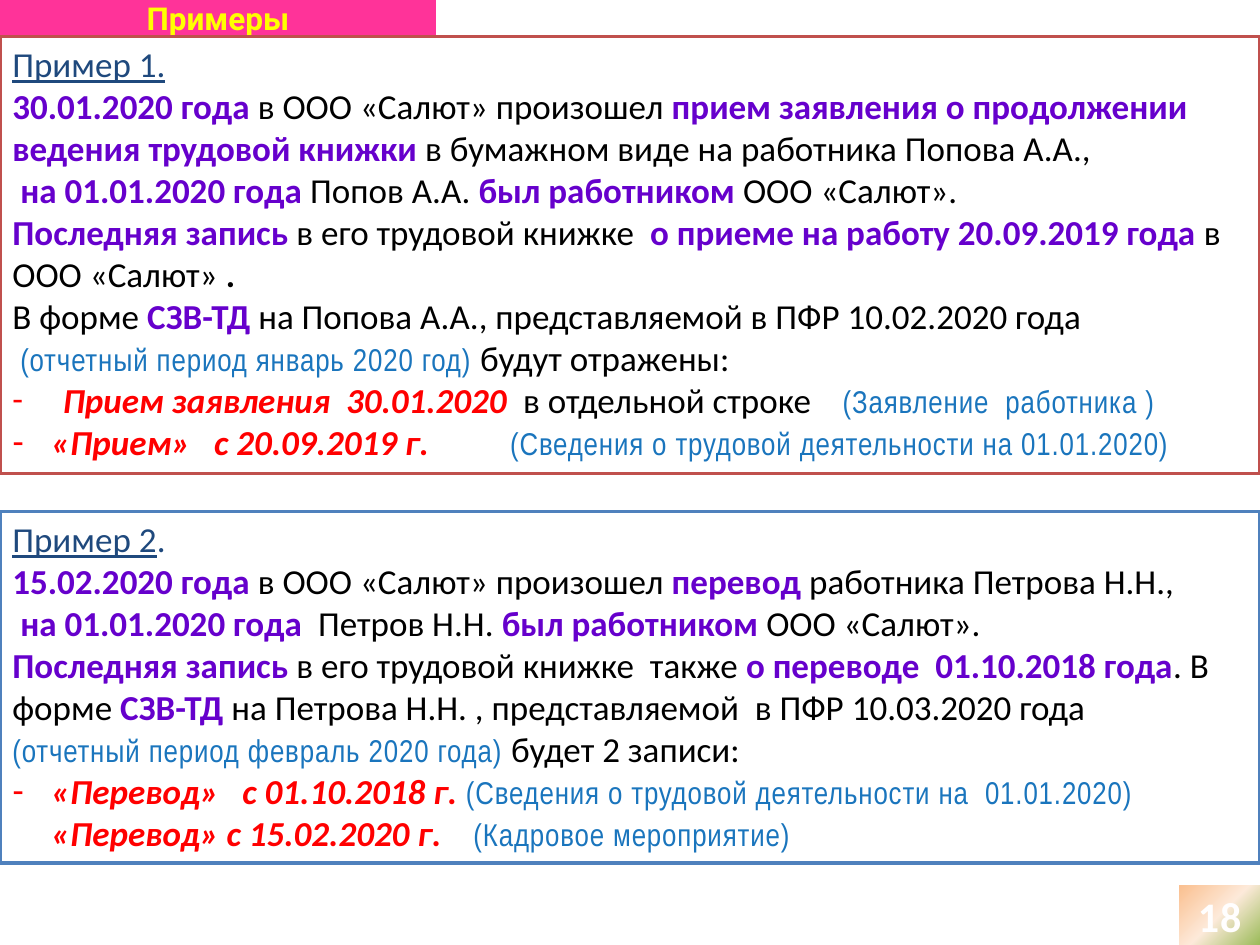
"""Build the slide with two worked examples of the СЗВ-ТД form."""
from lxml import etree
from pptx import Presentation
from pptx import util as u
from pptx.dml import color as dml
from pptx.enum import shapes, text
from pptx.oxml import ns

Inches = u.Inches
COLORS = {
    "pink": "FF3399", "yellow": "FFFF00", "white": "FFFFFF", "black": "000000",
    "navy": "1F497D", "violet": "6600CC", "red": "FF0000", "sky": "1A75BD",
    "blue": "4F81BD", "brick": "C0504D", "peach": "FAC090", "cream": "FDEADA",
    "green": "9BBB59", "number": "FFFEFE", "orange": "E78738",
}
STYLES = {
    "plain": {},
    "heading": {"color": "navy", "underline": True},
    "stop": {"color": "navy"},
    "key": {"color": "violet", "bold": True},
    "strong": {"bold": True},
    "event": {"color": "red", "bold": True, "italic": True},
    "note": {"color": "sky", "size": 18, "font": "Arial Narrow", "spacing": 50},
}


def add_run(paragraph, words, size=20, font="Calibri", color="black", bold=False,
            italic=False, underline=False, spacing=0):
    run = paragraph.add_run()
    run.text = words
    run.font.size = u.Pt(size)
    run.font.name = font
    run.font.color.rgb = dml.RGBColor.from_string(COLORS[color])
    run.font.bold, run.font.italic, run.font.underline = bold, italic, underline
    if spacing:
        run.font._element.set("spc", str(spacing))
    return run


def add_box(left, top, width, height, fill=None, line=None):
    box = slide.shapes.add_shape(shapes.MSO_SHAPE.RECTANGLE, Inches(left),
                                 Inches(top), Inches(width), Inches(height))
    box.shadow.inherit = False
    if fill:
        box.fill.solid()
        box.fill.fore_color.rgb = dml.RGBColor.from_string(COLORS[fill])
    if line:
        box.line.color.rgb = dml.RGBColor.from_string(COLORS[line])
        box.line.width = u.Pt(2)
    else:
        box.line.fill.background()
    box.text_frame.word_wrap = True
    return box


example_1 = [
    {"runs": [("heading", "Пример 1.")]},
    {"runs": [("key", "30.01.2020 года "), ("plain", "в ООО «Салют» произошел "),
              ("key", "прием заявления о продолжении ведения трудовой книжки"),
              ("plain", " в бумажном виде на работника Попова А.А.,")]},
    {"runs": [("plain", " "), ("key", "на 01.01.2020 года"), ("plain", " Попов А.А. "),
              ("key", "был работником "), ("plain", "ООО «Салют».")]},
    {"runs": [("key", "Последняя запись "), ("plain", "в его трудовой книжке  "),
              ("key", "о приеме на работу 20.09.2019 года "),
              ("plain", "в ООО «Салют» "), ("strong", ".")]},
    {"runs": [("plain", "В форме "), ("key", "СЗВ-ТД "),
              ("plain", "на Попова А.А., представляемой в ПФР 10.02.2020 года")]},
    {"runs": [("plain", " "), ("note", "(отчетный период январь 2020 год)"),
              ("plain", " будут отражены:")]},
    {"indent": 0.4, "tab": 6.59, "bullet_font": "Calibri",
     "runs": [("event", "Прием заявления  30.01.2020  "),
              ("plain", "в отдельной строке\t"), ("note", "(Заявление  работника )")]},
    {"indent": 0.31, "tab": 3.95, "bullet_font": "Arial",
     "runs": [("event", "«Прием»   с 20.09.2019 г.\t"),
              ("note", "(Сведения о трудовой деятельности на 01.01.2020)")]},
]
example_2 = [
    {"runs": [("heading", "Пример 2"), ("stop", ".")]},
    {"runs": [("key", "15.02.2020 года "), ("plain", "в ООО «Салют» произошел "),
              ("key", "перевод "), ("plain", "работника Петрова Н.Н.,")]},
    {"runs": [("plain", " "), ("key", "на 01.01.2020 года  "), ("plain", "Петров Н.Н. "),
              ("key", "был работником "), ("plain", "ООО «Салют».")]},
    {"runs": [("key", "Последняя запись "), ("plain", "в его трудовой книжке  также "),
              ("key", "о переводе  01.10.2018 года"), ("plain", ". В форме "),
              ("key", "СЗВ-ТД "),
              ("plain", "на Петрова Н.Н. , представляемой  в ПФР 10.03.2020 года")]},
    {"runs": [("note", "(отчетный период февраль 2020 года)"),
              ("plain", " будет 2 записи:")]},
    {"indent": 0.31, "tab": 3.66, "bullet_font": "Arial",
     "runs": [("event", "«Перевод»   с 01.10.2018 г. "),
              ("note", "(Сведения о трудовой деятельности на  01.01.2020) "),
              ("event", "«Перевод» с 15.02.2020 г.\t"),
              ("note", "(Кадровое мероприятие)")]},
]

deck = Presentation()
deck.slide_width, deck.slide_height = Inches(10), Inches(7.5)
slide = deck.slides.add_slide(deck.slide_layouts[6])

title = add_box(0, 0, 3.46, 0.29, fill="pink")
page = add_box(9.36, 7.03, 0.64, 0.47)
labels = [
    (title, "Примеры", {"size": 18, "font": "Roboto", "color": "yellow"}),
    (page, "18", {"size": 24, "color": "number", "spacing": 50}),
]
for label, words, style in labels:
    label.text_frame.vertical_anchor = text.MSO_ANCHOR.MIDDLE
    line = label.text_frame.paragraphs[0]
    line.alignment = text.PP_ALIGN.CENTER
    label_run = add_run(line, words, bold=True, **style)

outline = etree.Element(ns.qn("a:ln"), w=str(u.Pt(1)))
outline_fill = etree.SubElement(outline, ns.qn("a:solidFill"))
etree.SubElement(outline_fill, ns.qn("a:srgbClr"), val=COLORS["orange"])
label_run.font._element.insert(0, outline)

gradient = etree.Element(ns.qn("a:gradFill"), rotWithShape="1")
stops = etree.SubElement(gradient, ns.qn("a:gsLst"))
for position, name in ((0, "peach"), (50, "cream"), (100, "green")):
    stop = etree.SubElement(stops, ns.qn("a:gs"), pos=str(position * 1000))
    etree.SubElement(stop, ns.qn("a:srgbClr"), val=COLORS[name])
focus = etree.SubElement(gradient, ns.qn("a:path"))
focus.set("path", "circle")
etree.SubElement(focus, ns.qn("a:fillToRect"), r="100000", b="100000")
page._element.spPr.find(ns.qn("a:prstGeom")).addnext(gradient)

for top, height, border, example in ((4.06, 2.79, "blue", example_2),
                                     (0.29, 3.47, "brick", example_1)):
    panel = add_box(0, top, 10, height, fill="white", line=border)
    frame = panel.text_frame
    frame.auto_size = text.MSO_AUTO_SIZE.SHAPE_TO_FIT_TEXT
    frame.vertical_anchor = text.MSO_ANCHOR.TOP
    for index, entry in enumerate(example):
        paragraph = frame.add_paragraph() if index else frame.paragraphs[0]
        paragraph.alignment = text.PP_ALIGN.LEFT
        for style, words in entry["runs"]:
            add_run(paragraph, words, **STYLES[style])
        if "indent" in entry:
            props = paragraph._p.get_or_add_pPr()
            props.set("marL", str(Inches(entry["indent"])))
            props.set("indent", str(-Inches(entry["indent"])))
            etree.SubElement(props, ns.qn("a:buFont"), typeface=entry["bullet_font"])
            etree.SubElement(props, ns.qn("a:buChar"), char="-")
            tabs = etree.SubElement(props, ns.qn("a:tabLst"))
            etree.SubElement(tabs, ns.qn("a:tab"), pos=str(Inches(entry["tab"])), algn="l")

deck.save("out.pptx")
